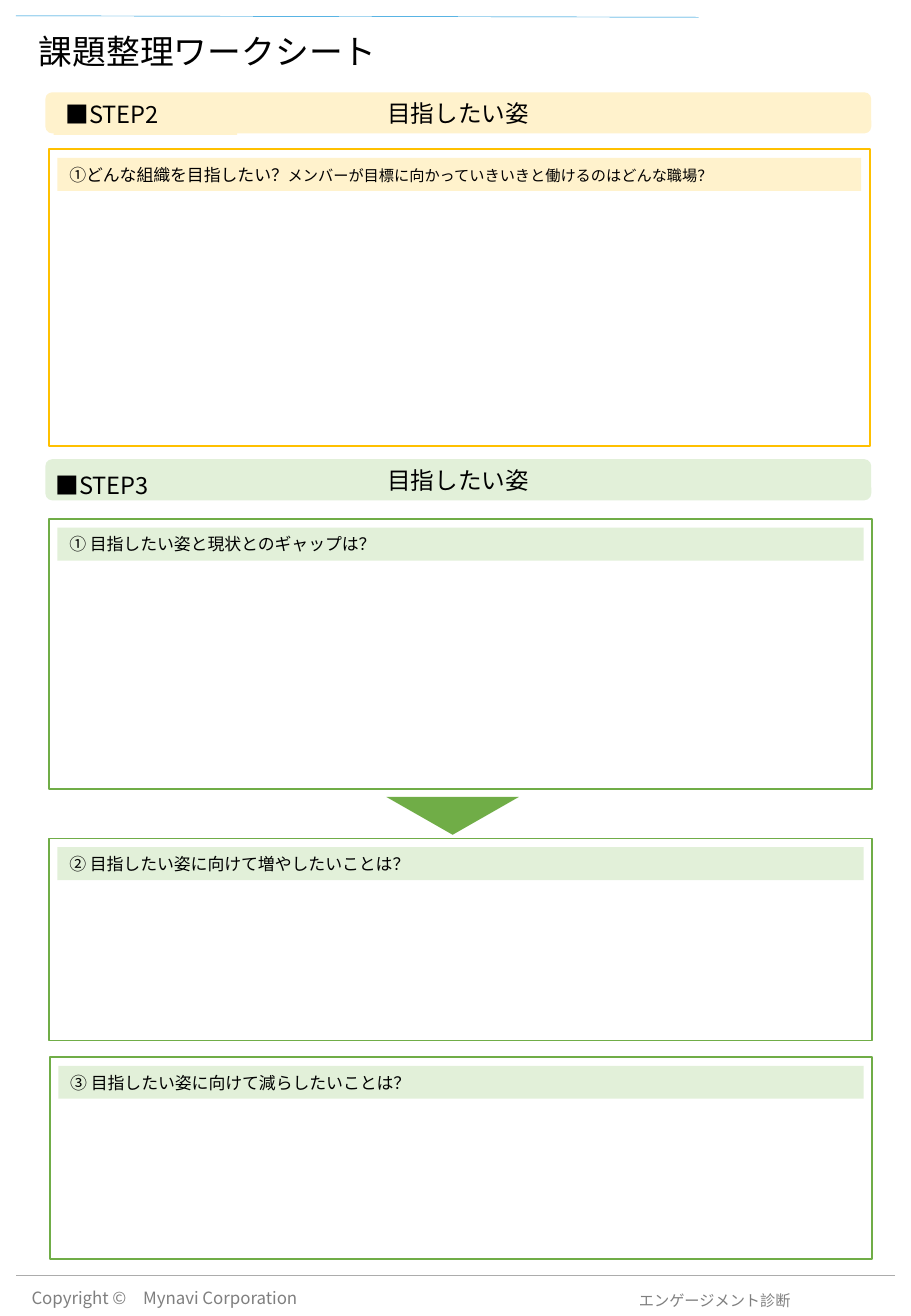
from lxml.etree import SubElement
from pptx import Presentation
from pptx.dml.color import RGBColor
from pptx.enum.shapes import MSO_CONNECTOR, MSO_SHAPE
from pptx.enum.text import MSO_ANCHOR, MSO_AUTO_SIZE, PP_ALIGN
from pptx.oxml.ns import qn
from pptx.util import Cm, Pt

# Content
FONT = "Noto Sans CJK JP"
HEX = {"ink": "000000", "gold": "FFC000", "cream": "FFF2CC", "green": "70AD47",
       "mint": "E2F0D9", "blue": "008CD6", "rule": "ACACAC", "gray": "7F7F7F"}
TITLE = "課題整理ワークシート"
GOAL = "目指したい姿"

# Band top, fill, step label, label place (cm)
STEPS = [
    (1.93, "cream", "■STEP2", (1.12, 1.96, 3.84, 0.86)),
    (9.6, "mint", "■STEP3", (0.91, 9.7, 3.05, 0.86)),
]
# Box place (cm), line, heading fill, heading runs with sizes
BOXES = [
    ((1.02, 3.12, 17.17, 6.2), "gold", "cream",
     [("①どんな組織を目指したい？", 10),
      ("メンバーが目標に向かっていきいきと働けるのはどんな職場？", 9)]),
    ((1.02, 10.85, 17.22, 5.64), "green", "mint",
     [("① 目指したい姿と現状とのギャップは？", 10)]),
    ((1.02, 17.53, 17.22, 4.22), "green", "mint",
     [("② 目指したい姿に向けて増やしたいことは？", 10)]),
    ((1.04, 22.1, 17.2, 4.22), "green", "mint",
     [("③ 目指したい姿に向けて減らしたいことは？", 10)]),
]
# Rule start, end (cm), colour, width
RULES = [
    ((14.61, 0.36), (0.33, 0.33), "blue", 0.25),
    ((18.72, 26.67), (0.33, 26.67), "rule", 0.75),
]
# Footer text, place (cm), size, alignment, side inset
NOTES = [
    ("Copyright ©　Mynavi Corporation", (0.41, 26.87, 6.5, 0.51), 10, PP_ALIGN.LEFT, 0.25),
    ("エンゲージメント診断", (9.09, 26.9, 7.44, 0.58), 9, PP_ALIGN.RIGHT, 0),
]
INSET, HEAD = 0.18, 0.69

deck = Presentation()
deck.slide_width, deck.slide_height = Cm(19.05), Cm(27.51)
slide = deck.slides.add_slide(deck.slide_layouts[5])
shapes = slide.shapes


def rgb(key):
    return RGBColor.from_string(HEX[key])


def cms(place):
    return [Cm(n) for n in place]


def write(shape, runs, size, align=PP_ALIGN.LEFT, ink="ink", side=0.25):
    frame = shape.text_frame
    frame.auto_size = MSO_AUTO_SIZE.NONE
    frame.word_wrap = True
    frame.vertical_anchor = MSO_ANCHOR.MIDDLE
    frame.margin_left = frame.margin_right = Cm(side)
    para = frame.paragraphs[0]
    para.alignment = align
    para.font.size = Pt(size)
    para.font.color.rgb = rgb(ink)
    para.font.name = FONT
    # East Asian letters need their own typeface element
    props = para._p.pPr.find(qn("a:defRPr"))
    SubElement(props, qn("a:ea")).set("typeface", FONT)
    for text, pts in runs:
        run = para.add_run()
        run.text = text
        if pts != size:
            run.font.size = Pt(pts)
    return para


def draw(kind, place, fill=None, line=None):
    shape = shapes.add_shape(kind, *cms(place))
    shape.shadow.inherit = False
    if fill:
        shape.fill.solid()
        shape.fill.fore_color.rgb = rgb(fill)
    else:
        shape.fill.background()
    if line:
        shape.line.color.rgb = rgb(line)
        shape.line.width = Pt(1)
    else:
        shape.line.fill.background()
    return shape


# Rules at top and bottom
for start, end, tone, width in RULES:
    rule = shapes.add_connector(MSO_CONNECTOR.STRAIGHT, *cms(start + end))
    rule.line.color.rgb = rgb(tone)
    rule.line.width = Pt(width)
    SubElement(rule._element.spPr, qn("a:effectLst"))

# Title
title = shapes.title
title.left, title.top, title.width, title.height = cms((0.56, 0.43, 17.91, 1.37))
write(title, [(TITLE, 20)], 20).line_spacing = 0.9

# Step bands with labels
for top, fill, label, place in STEPS:
    band = draw(MSO_SHAPE.ROUNDED_RECTANGLE, (0.95, top, 17.27, 0.86), fill)
    write(band, [(GOAL, 14)], 14, PP_ALIGN.CENTER)
    write(draw(MSO_SHAPE.RECTANGLE, place, fill if top < 5 else None), [(label, 14)], 14)

# Answer boxes with headings
for place, line, fill, runs in BOXES:
    left, top, width, high = place
    draw(MSO_SHAPE.RECTANGLE, place, line=line)
    head = (left + INSET, top + INSET, width - 2 * INSET, HEAD)
    write(draw(MSO_SHAPE.RECTANGLE, head, fill), runs, 10)

# Arrow between the boxes
arrow = draw(MSO_SHAPE.ISOSCELES_TRIANGLE, (8.08, 16.66, 2.77, 0.79), "green")
arrow.rotation = 180

# Footer
for text, place, size, align, side in NOTES:
    write(shapes.add_textbox(*cms(place)), [(text, size)], size, align, "gray", side)

deck.save("out.pptx")
